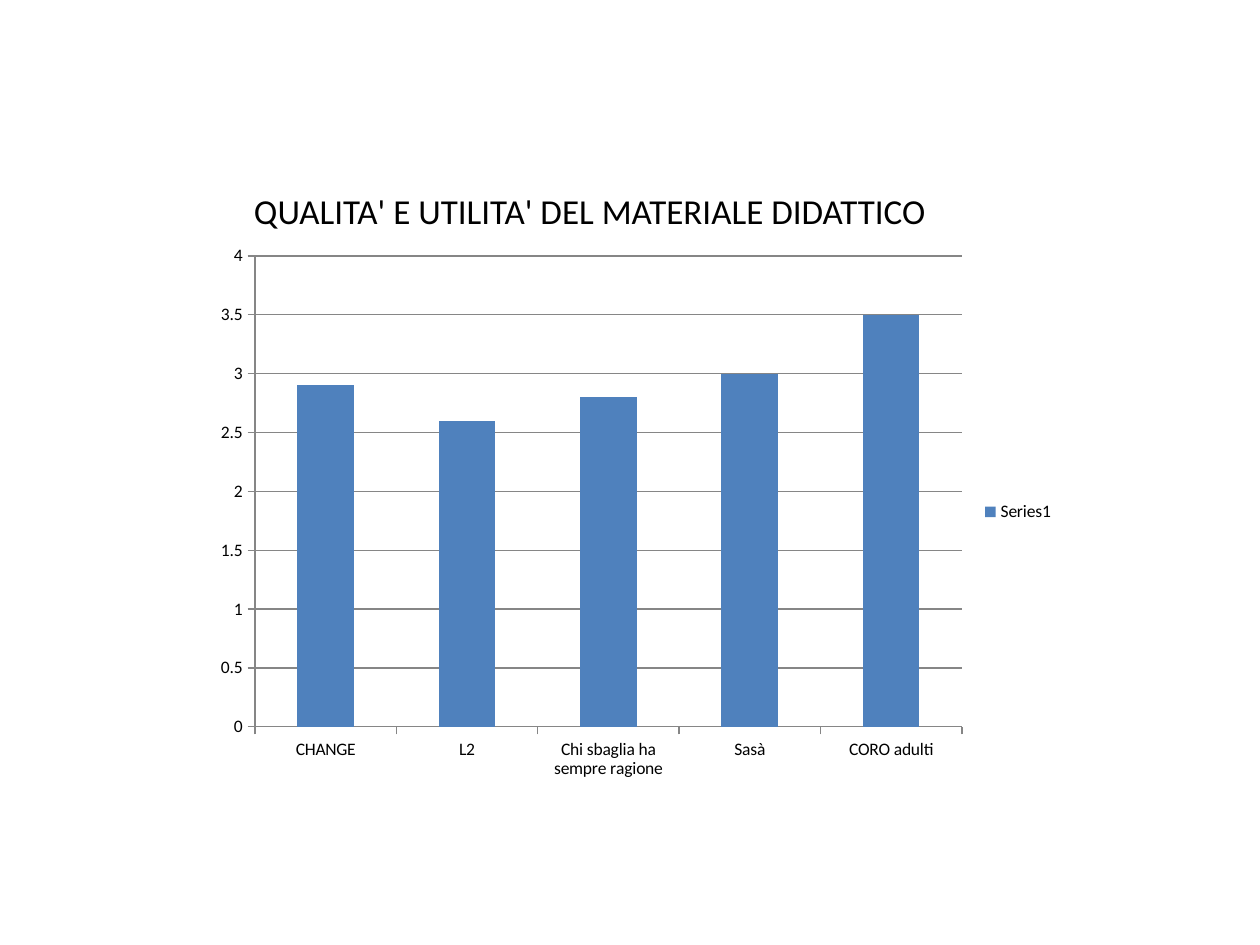
from dataclasses import dataclass

from lxml.etree import SubElement
from pptx import Presentation
from pptx.chart.data import CategoryChartData
from pptx.dml.color import RGBColor
from pptx.enum.chart import XL_CHART_TYPE, XL_LEGEND_POSITION, XL_TICK_MARK
from pptx.enum.text import MSO_ANCHOR
from pptx.oxml.ns import qn
from pptx.util import Emu, Pt

PX_PER_INCH = 126
FONT = "Calibri"
BLACK = RGBColor(0x00, 0x00, 0x00)
BLUE = RGBColor(0x4F, 0x81, 0xBD)
GRAY = RGBColor(0x86, 0x86, 0x86)


@dataclass(frozen=True)
class Box:
    left: int
    top: int
    width: int
    height: int

    def emu(self) -> tuple[Emu, ...]:
        return tuple(px(n) for n in (self.left, self.top, self.width, self.height))


@dataclass(frozen=True)
class Rating:
    material: str
    score: float


TITLE_BOX = Box(253, 55, 725, 179)
CHART_BOX = Box(203, 234, 864, 556)
PLOT_BOX = Box(255, 256, 707, 471)
RATINGS = [
    Rating("CHANGE", 2.9),
    Rating("L2", 2.6),
    Rating("Chi sbaglia ha sempre ragione", 2.8),
    Rating("Sasà", 3),
    Rating("CORO adulti", 3.5),
]


def px(n: int) -> Emu:
    return Emu(round(n * 914400 / PX_PER_INCH))


def style_font(font, size: int) -> None:
    font.name = FONT
    font.size = Pt(size)
    font.bold = False
    font.color.rgb = BLACK


def place_plot(chart, plot: Box, frame: Box) -> None:
    """Fix the inner plot area as fractions of the chart frame."""
    area = chart.plots[0]._element.getparent()
    layout = area.find(qn("c:layout"))
    if layout is None:
        layout = SubElement(area, qn("c:layout"))
        area.insert(0, layout)
    manual = SubElement(layout, qn("c:manualLayout"))
    settings = {
        "layoutTarget": "inner",
        "xMode": "edge",
        "yMode": "edge",
        "x": (plot.left - frame.left) / frame.width,
        "y": (plot.top - frame.top) / frame.height,
        "w": plot.width / frame.width,
        "h": plot.height / frame.height,
    }
    for name, value in settings.items():
        SubElement(manual, qn(f"c:{name}")).set("val", str(value))


def add_ratings_chart(s, ratings: list[Rating]) -> None:
    data = CategoryChartData()
    data.categories = [rating.material for rating in ratings]
    data.add_series("Series1", [rating.score for rating in ratings])
    chart = s.shapes.add_chart(
        XL_CHART_TYPE.COLUMN_CLUSTERED, *CHART_BOX.emu(), data
    ).chart
    style_font(chart.font, 10)
    chart.has_title = False
    chart.has_legend = True
    chart.legend.position = XL_LEGEND_POSITION.RIGHT
    chart.legend.include_in_layout = False

    plot = chart.plots[0]
    plot.gap_width = 150
    plot.vary_by_categories = False
    fill = plot.series[0].format.fill
    fill.solid()
    fill.fore_color.rgb = BLUE

    values = chart.value_axis
    values.minimum_scale, values.maximum_scale = 0, 4
    values.major_unit = 0.5
    values.has_major_gridlines = True
    for axis in (chart.category_axis, values):
        axis.major_tick_mark = XL_TICK_MARK.OUTSIDE
        axis.minor_tick_mark = XL_TICK_MARK.NONE
    for part in (chart.category_axis, values, values.major_gridlines):
        part.format.line.color.rgb = GRAY
        part.format.line.width = Pt(0.75)
    place_plot(chart, PLOT_BOX, CHART_BOX)


def add_title_table(s, text: str) -> None:
    table = s.shapes.add_table(1, 1, *TITLE_BOX.emu()).table
    table.first_row = False
    table.horz_banding = False
    cell = table.cell(0, 0)
    cell.fill.background()
    cell.vertical_anchor = MSO_ANCHOR.BOTTOM
    cell.margin_left = cell.margin_top = cell.margin_right = px(1)
    cell.margin_bottom = 0
    r = cell.text_frame.paragraphs[0].add_run()
    r.text = text
    style_font(r.font, 20)


def main() -> None:
    prs = Presentation()
    prs.slide_width, prs.slide_height = px(1260), px(945)
    s = prs.slides.add_slide(prs.slide_layouts[6])
    add_ratings_chart(s, RATINGS)
    add_title_table(s, "QUALITA' E UTILITA' DEL MATERIALE DIDATTICO")
    prs.save("out.pptx")


if __name__ == "__main__":
    main()
